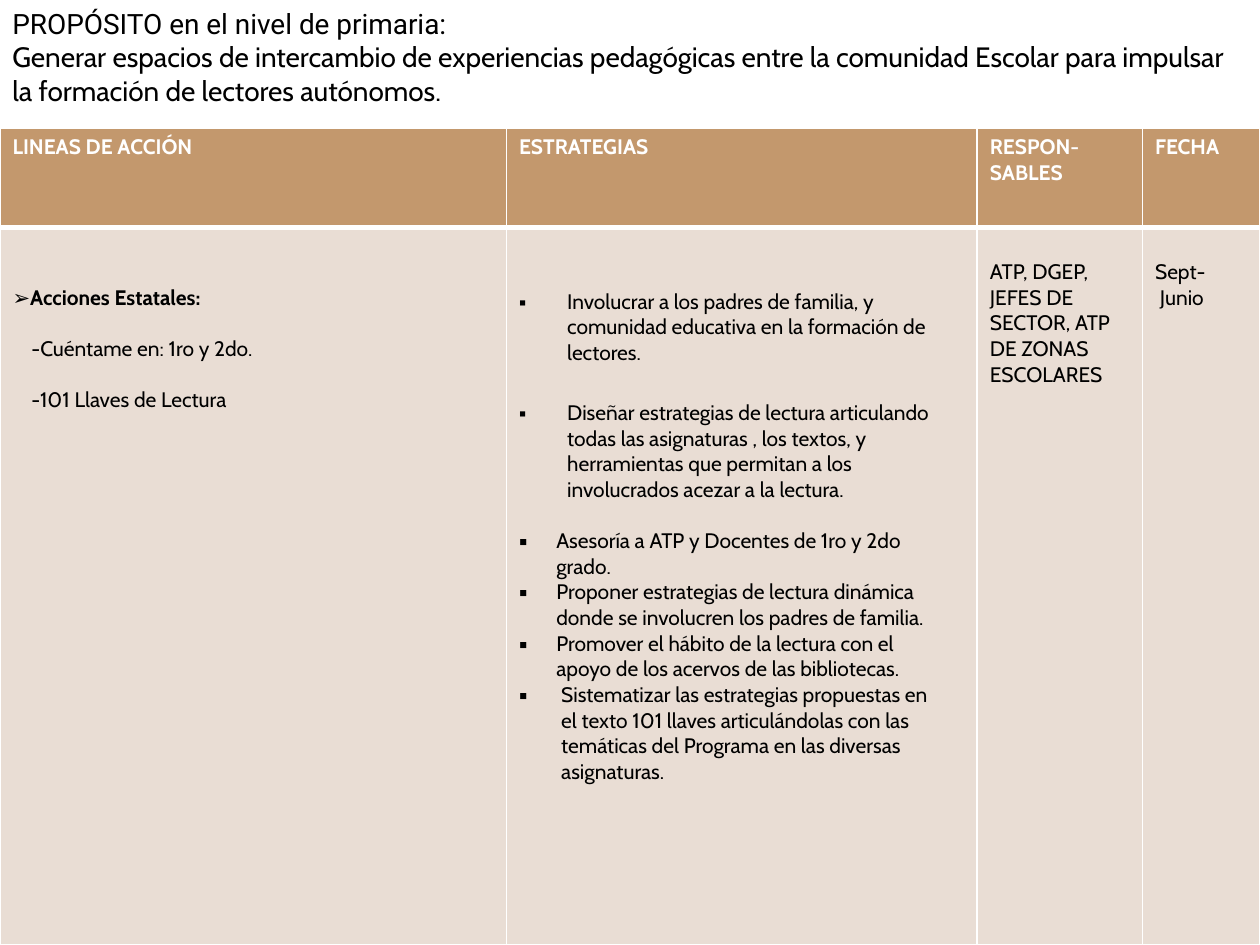
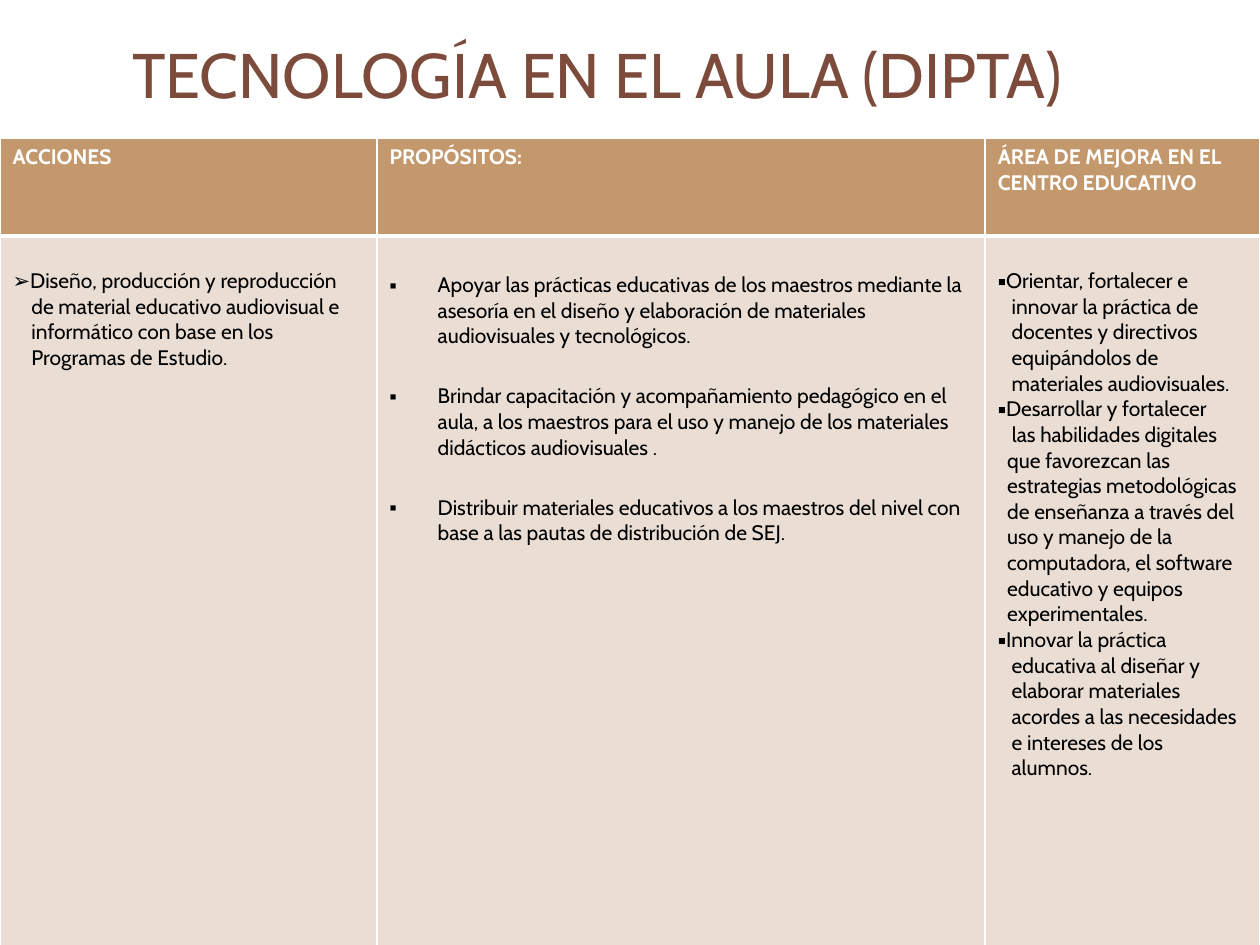
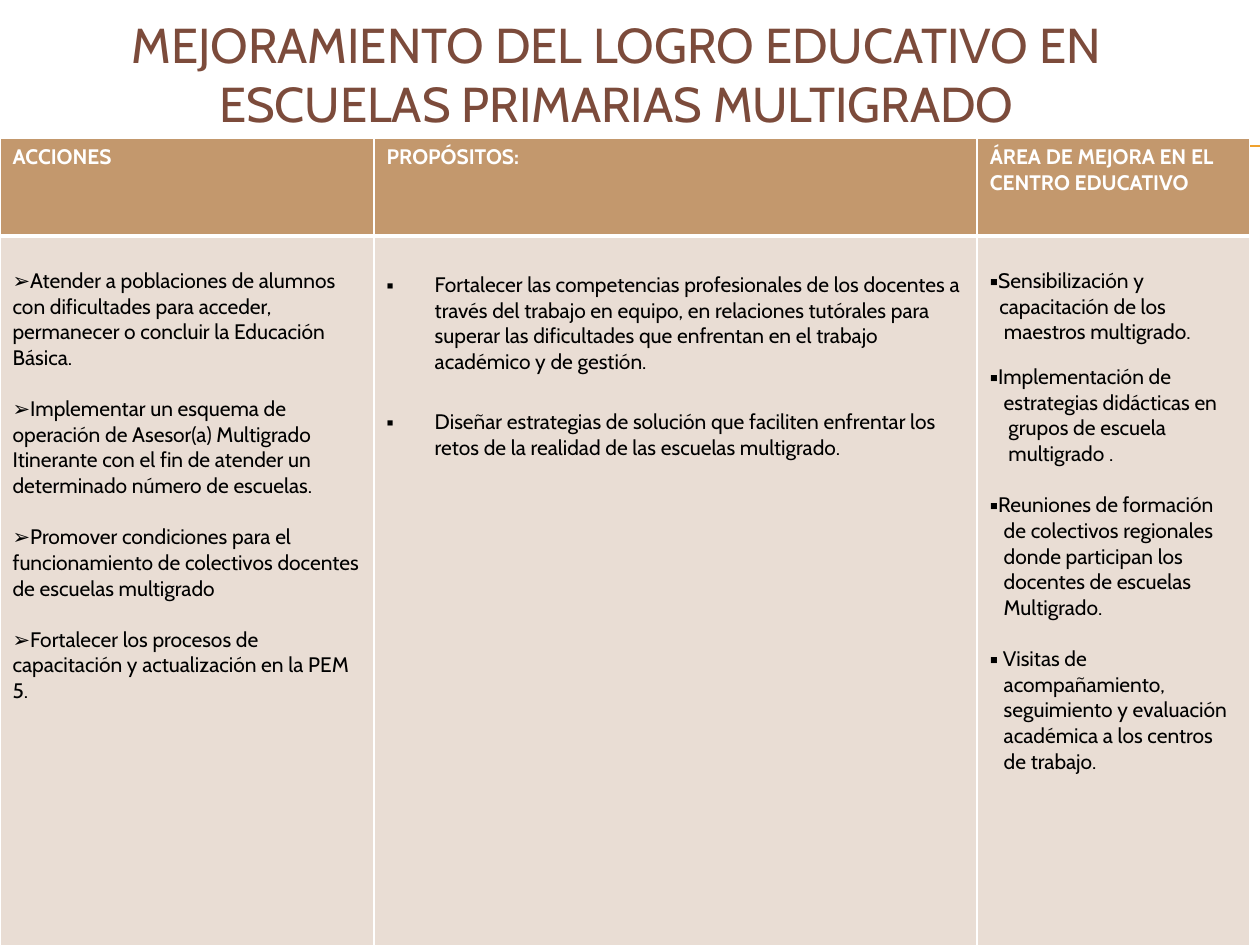
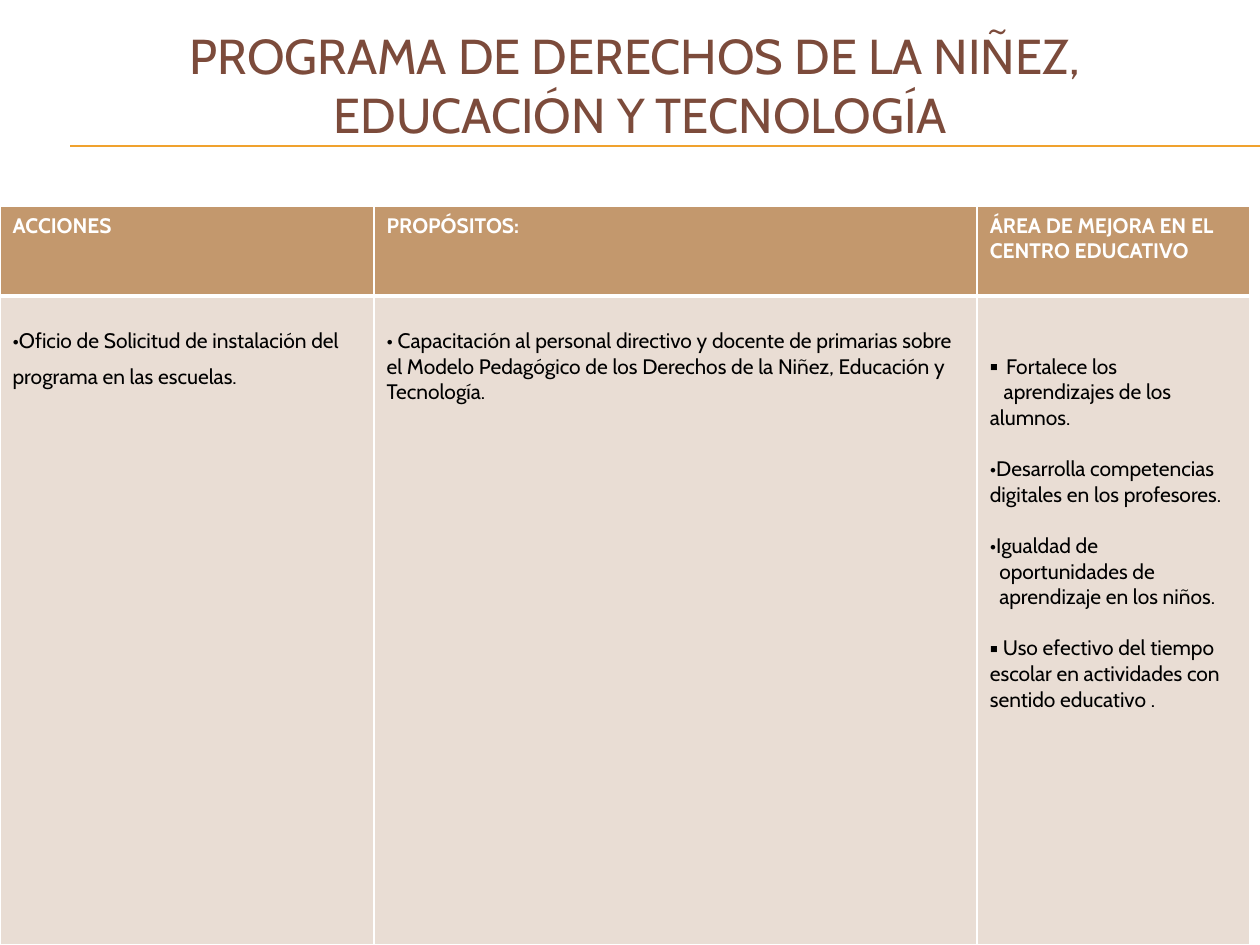
from copy import deepcopy
from dataclasses import dataclass

from lxml import etree
from pptx import Presentation
from pptx.dml.color import RGBColor
from pptx.enum.shapes import MSO_CONNECTOR
from pptx.enum.text import MSO_ANCHOR, PP_ALIGN
from pptx.oxml.ns import qn
from pptx.util import Cm, Pt

STRAIGHT = MSO_CONNECTOR.STRAIGHT
TOP, MIDDLE = MSO_ANCHOR.TOP, MSO_ANCHOR.MIDDLE
LEFT, CENTER = PP_ALIGN.LEFT, PP_ALIGN.CENTER

ARROW, SQUARE, DOT = "➢", "▪", "•"


@dataclass(frozen=True)
class Theme:
    font: str = "Cabin"
    purpose_font: str = "Roboto"
    text: str = "000000"
    white: str = "FFFFFF"
    title: str = "7C4B3B"
    header: str = "C3986D"
    body: str = "E9DDD4"
    rule: str = "F0A22E"
    table_size: float = 12
    purpose_size: float = 16
    title_size: float = 28
    large_title_size: float = 36
    line: float = 14.6
    goal_gap: float = 19.6
    cell_margin: float = 0.13


THEME = Theme()


def write_paragraph(text_frame, text, size=THEME.table_size, font=THEME.font,
                    color=THEME.text, bold=False, align=LEFT, bullet=None,
                    bullet_size=100, left=0, hang=0, gap=0, spacing=None):
    is_first = len(text_frame.paragraphs) == 1 and not text_frame.text
    paragraph = text_frame.paragraphs[0] if is_first else text_frame.add_paragraph()
    paragraph.alignment = align
    paragraph.space_before = Pt(gap)
    if spacing:
        paragraph.line_spacing = spacing
    properties = paragraph._p.get_or_add_pPr()
    properties.set("marL", str(Cm(left + hang)))
    properties.set("indent", str(-Cm(hang)))
    if bullet:
        etree.SubElement(properties, qn("a:buSzPct")).set("val", str(bullet_size * 1000))
        etree.SubElement(properties, qn("a:buFont")).set("typeface", font)
        etree.SubElement(properties, qn("a:buChar")).set("char", bullet)
    else:
        etree.SubElement(properties, qn("a:buNone"))
    for index, line in enumerate(text.split("\n")):
        if index:
            paragraph.add_line_break()
        run = paragraph.add_run()
        run.text = line
        run.font.size = Pt(size)
        run.font.name = font
        run.font.bold = bold
        run.font.color.rgb = RGBColor.from_string(color)
    for line_break in paragraph._p.findall(qn("a:br")):
        line_break.append(deepcopy(run.font._element))


def item(text, **text_format):
    return text, text_format


def spaced_items(texts, gap=THEME.line, **text_format):
    return [item(text, gap=gap if index else 0, **text_format)
            for index, text in enumerate(texts)]


def goals(*texts):
    return spaced_items(texts, gap=THEME.goal_gap, bullet=SQUARE, bullet_size=85, hang=0.97)


def lead_and_rest(lead, rest, bullet=SQUARE, left=0.28, gap=0):
    return [item(lead, bullet=bullet, gap=gap), item(rest, left=left)]


def add_text(slide, box, paragraphs, anchor=TOP, **text_format):
    shape = slide.shapes.add_textbox(*(Cm(length) for length in box))
    text_frame = shape.text_frame
    text_frame.word_wrap = True
    text_frame.vertical_anchor = anchor
    for text, own_format in paragraphs:
        write_paragraph(text_frame, text, **{**text_format, **own_format})


def add_title(slide, box, *lines, size=THEME.title_size, anchor=MIDDLE):
    add_text(slide, box, [item(line) for line in lines], anchor=anchor,
             size=size, color=THEME.title, align=CENTER)


def add_shared_rules(slide):
    layout_tree = slide.slide_layout.shapes._spTree
    for top in (2.93, 2.95):
        rule = slide.shapes.add_connector(STRAIGHT, Cm(1.42), Cm(top), Cm(25.4), Cm(top))
        rule.line.color.rgb = RGBColor.from_string(THEME.rule)
        rule.line.width = Pt(0.75)
        etree.SubElement(rule._element.spPr, qn("a:effectLst"))
        layout_tree.append(rule._element)


def style_cell(cell, fill, top_width, bottom_width):
    properties = cell._tc.get_or_add_tcPr()
    for side, width in (("L", 1), ("R", 1), ("T", top_width), ("B", bottom_width)):
        border = etree.SubElement(properties, qn(f"a:ln{side}"), w=str(Pt(width)))
        solid = etree.SubElement(border, qn("a:solidFill"))
        etree.SubElement(solid, qn("a:srgbClr"), val=THEME.white)
    cell.fill.solid()
    cell.fill.fore_color.rgb = RGBColor.from_string(fill)
    cell.margin_top = cell.margin_bottom = Cm(THEME.cell_margin)


def add_plan_table(slide, top, widths, heights, columns):
    frame = slide.shapes.add_table(2, len(widths), Cm(0), Cm(top),
                                   Cm(sum(widths)), Cm(sum(heights)))
    table = frame.table
    table.first_row = True
    table.horz_banding = False
    for row, height in zip(table.rows, heights):
        row.height = Cm(height)
    for index, (width, (heading, offset, items)) in enumerate(zip(widths, columns)):
        table.columns[index].width = Cm(width)
        header, body = table.cell(0, index), table.cell(1, index)
        style_cell(header, THEME.header, 1, 3)
        style_cell(body, THEME.body, 3, 1)
        write_paragraph(header.text_frame, heading, color=THEME.white, bold=True)
        body.margin_top = Cm(THEME.cell_margin) + Pt(offset)
        for text, text_format in items:
            write_paragraph(body.text_frame, text, **text_format)


def add_program_table(slide, top, widths, heights, actions, purposes, improvements):
    headings = ("ACCIONES", "PROPÓSITOS:", "ÁREA DE MEJORA EN EL CENTRO EDUCATIVO")
    bodies = (actions, purposes, improvements)
    columns = [(heading, *body) for heading, body in zip(headings, bodies)]
    add_plan_table(slide, top, widths, heights, columns)


def build_reading_slide(slide):
    line = THEME.line
    actions = [
        item("Acciones Estatales:", bullet=ARROW, bold=True),
        item("-Cuéntame en: 1ro y 2do.", left=0.38, gap=line),
        item("-101 Llaves de Lectura", left=0.38, gap=line),
    ]
    strategies = goals(
        "Involucrar a los padres de familia, y comunidad educativa en la formación de lectores.",
        "Diseñar estrategias de lectura articulando todas las asignaturas , los textos, y "
        "herramientas que permitan a los involucrados acezar a la lectura.",
    ) + [
        item("Asesoría a ATP y Docentes de 1ro y 2do\ngrado.",
             bullet=SQUARE, hang=0.75, gap=line),
        item("Proponer estrategias de lectura dinámica\ndonde se involucren los padres de familia.",
             bullet=SQUARE, hang=0.75),
        item("Promover el hábito de la lectura con el\napoyo de los acervos de las bibliotecas.",
             bullet=SQUARE, hang=0.75),
        item("Sistematizar las estrategias propuestas en\nel texto 101 llaves articulándolas con las\n"
             "temáticas del Programa en las diversas\nasignaturas.",
             bullet=SQUARE, hang=0.85),
    ]
    add_plan_table(slide, 2.58, (10.21, 9.49, 3.33, 2.37), (2, 14.47), [
        ("LINEAS DE ACCIÓN", 2 * line, actions),
        ("ESTRATEGIAS", 2 * line + 2.4, strategies),
        ("RESPON-SABLES", line,
         [item("ATP, DGEP, JEFES DE SECTOR, ATP DE ZONAS ESCOLARES")]),
        ("FECHA", line, [item("Sept-"), item("Junio", left=0.1)]),
    ])
    add_text(slide, (0, 0, 25.4, 3), [
        item("PROPÓSITO en el nivel de primaria:", font=THEME.purpose_font),
        item("Generar espacios de intercambio de experiencias pedagógicas entre la comunidad "
             "Escolar para impulsar la formación de lectores autónomos."),
    ], size=THEME.purpose_size)


def build_technology_slide(slide):
    line = THEME.line
    add_title(slide, (0.75, 0, 22.86, 2.97), "TECNOLOGÍA EN EL AULA (DIPTA) ",
              size=THEME.large_title_size)
    actions = lead_and_rest(
        "Diseño, producción y reproducción",
        "de material educativo audiovisual e\ninformático con base en los\nProgramas de Estudio.",
        bullet=ARROW, left=0.38)
    purposes = goals(
        "Apoyar las prácticas educativas de los maestros mediante la asesoría en el diseño y "
        "elaboración de materiales audiovisuales y tecnológicos.",
        "Brindar capacitación y acompañamiento pedagógico en el aula, a los maestros para el "
        "uso y manejo de los materiales didácticos audiovisuales .",
        "Distribuir materiales educativos a los maestros del nivel con base a las pautas de "
        "distribución de SEJ.",
    )
    improvements = [
        *lead_and_rest("Orientar, fortalecer e",
                       "innovar la práctica de\ndocentes y directivos\n"
                       "equipándolos de\nmateriales audiovisuales."),
        *lead_and_rest("Desarrollar y fortalecer",
                       " las habilidades digitales\nque favorezcan las\n"
                       "estrategias metodológicas\nde enseñanza a través del\n"
                       "uso y manejo de la\ncomputadora, el software\n"
                       "educativo y equipos\nexperimentales.", left=0.19),
        *lead_and_rest("Innovar la práctica",
                       "educativa al diseñar y\nelaborar materiales\n"
                       "acordes a las necesidades\ne intereses de los\nalumnos."),
    ]
    add_program_table(slide, 2.78, (7.6, 12.26, 5.54), (1.98, 14.3),
                      (line, actions), (line + 2.4, purposes), (line, improvements))


def build_multigrade_slide(slide):
    line = THEME.line
    add_title(slide, (0.99, 0, 22.86, 2.97),
              "MEJORAMIENTO DEL LOGRO EDUCATIVO EN ESCUELAS PRIMARIAS MULTIGRADO")
    actions = spaced_items((
        "Atender a poblaciones de alumnos con dificultades para acceder, permanecer o concluir "
        "la Educación Básica.",
        "Implementar un esquema de operación de Asesor(a) Multigrado Itinerante con el fin de "
        "atender un determinado número de escuelas.",
        "Promover condiciones para el funcionamiento de colectivos docentes de escuelas multigrado",
        "Fortalecer los procesos de capacitación y actualización en la PEM 5.",
    ), bullet=ARROW)
    purposes = goals(
        "Fortalecer las competencias profesionales de los docentes a través del trabajo en "
        "equipo, en relaciones tutórales para superar las dificultades que enfrentan en el "
        "trabajo académico y de gestión.",
        "Diseñar estrategias de solución que faciliten enfrentar los retos de la realidad de "
        "las escuelas multigrado.",
    )
    improvements = [
        *lead_and_rest("Sensibilización y", "capacitación de los\n maestros multigrado.", left=0.19),
        *lead_and_rest("Implementación de",
                       "estrategias didácticas en\n grupos de escuela\n multigrado .", gap=11),
        *lead_and_rest("Reuniones de formación",
                       "de colectivos regionales\ndonde participan los\n"
                       "docentes de escuelas\nMultigrado.", gap=line),
        *lead_and_rest(" Visitas de",
                       "acompañamiento,\nseguimiento y evaluación\n"
                       "académica a los centros\nde trabajo.", gap=line),
    ]
    add_program_table(slide, 2.78, (7.54, 12.16, 5.49), (1.98, 14.3),
                      (line, actions), (line + 2.4, purposes), (line, improvements))


def build_rights_slide(slide):
    line = THEME.line
    actions = [item("Oficio de Solicitud de instalación del programa en las escuelas.",
                    bullet=DOT, spacing=1.4)]
    purposes = [item(" Capacitación al personal directivo y docente de primarias sobre el Modelo "
                     "Pedagógico de los Derechos de la Niñez, Educación y Tecnología.", bullet=DOT)]
    improvements = [
        item("Fortalece los", bullet=SQUARE, hang=0.33),
        item("aprendizajes de los alumnos.", left=0.28, hang=-0.28),
        item("Desarrolla competencias digitales en los profesores.", bullet=DOT, gap=line),
        *lead_and_rest("Igualdad de", "oportunidades de\naprendizaje en los niños.",
                       bullet=DOT, left=0.19, gap=line),
        item(" Uso efectivo del tiempo escolar en actividades con sentido educativo .",
             bullet=SQUARE, gap=line),
    ]
    add_program_table(slide, 4.16, (7.54, 12.16, 5.49), (1.81, 13.08),
                      (line - 5.7, actions), (line, purposes), (2 * line, improvements))
    add_title(slide, (0.99, 0.39, 23.83, 2.64), "PROGRAMA DE DERECHOS DE LA NIÑEZ, ",
              "EDUCACIÓN Y TECNOLOGÍA", anchor=TOP)


def main():
    presentation = Presentation()
    presentation.slide_width = Cm(25.4)
    presentation.slide_height = Cm(19.05)
    blank_layout = presentation.slide_layouts[6]
    builders = (build_reading_slide, build_technology_slide,
                build_multigrade_slide, build_rights_slide)
    slides = [presentation.slides.add_slide(blank_layout) for _ in builders]
    add_shared_rules(slides[0])
    for build_slide, slide in zip(builders, slides):
        build_slide(slide)
    presentation.save("out.pptx")


if __name__ == "__main__":
    main()
